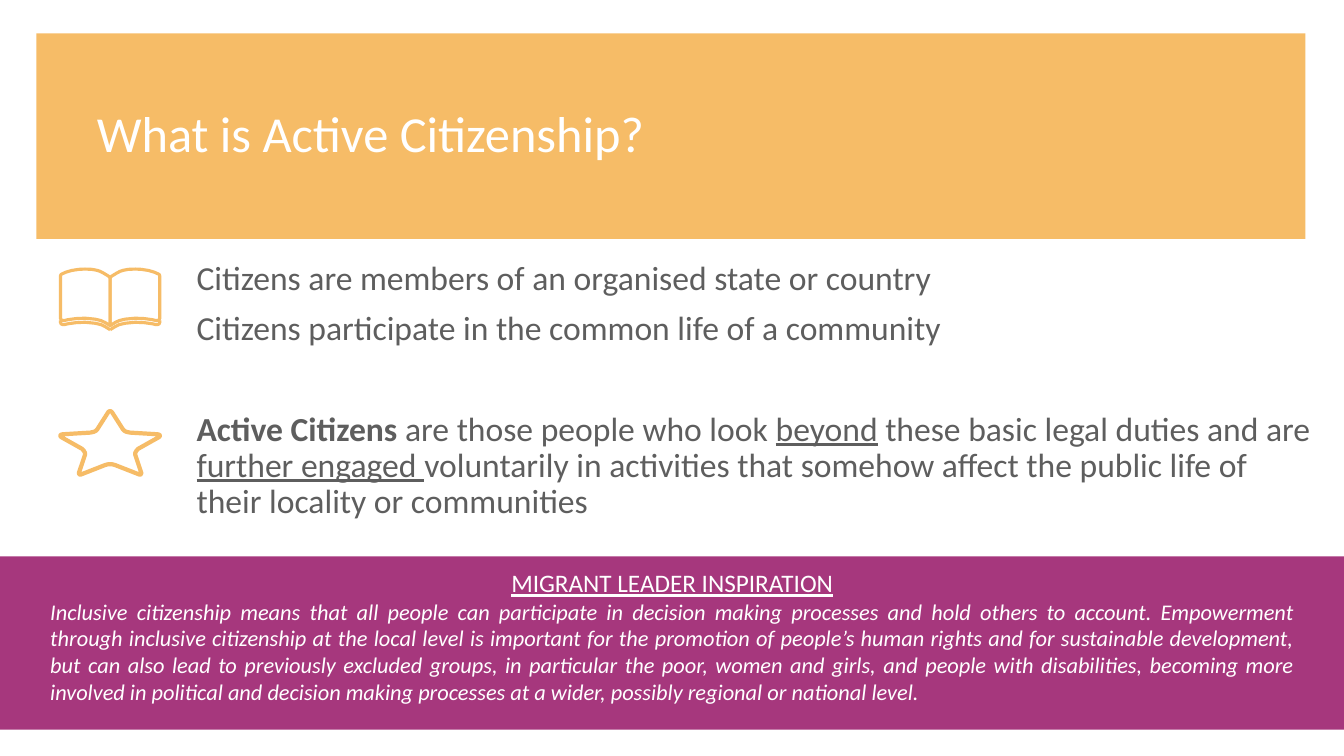
"""Build the slide that explains active citizenship."""
import pptx
import pptx.dml.color
import pptx.enum.text
import pptx.oxml.ns
import pptx.util
import lxml.etree

Pt = pptx.util.Pt
ALIGN = pptx.enum.text.PP_ALIGN
AMBER, PURPLE, GREY, WHITE = "F6BC67", "A6377D", "5E5E5E", "FFFFFF"


def color(hex_value):
    return pptx.dml.color.RGBColor.from_string(hex_value)


def draw_outline(points, width, closed):
    corners = [(Pt(x), Pt(y)) for x, y in points]
    builder = slide.shapes.build_freeform(*corners[0], scale=1.0)
    builder.add_line_segments(corners[1:], close=closed)
    outline = builder.convert_to_shape()
    outline.shadow.inherit = False
    outline.fill.background()
    outline.line.color.rgb = color(AMBER)
    outline.line.width = Pt(width)


deck = pptx.Presentation()
deck.slide_width, deck.slide_height = Pt(960), Pt(540)
slide = deck.slides.add_slide(deck.slide_layouts[1])
heading, definitions = slide.placeholders

bands = [(26, 23.8, 906.5, 146.9, AMBER), (0, 397.4, 960, 123.8, PURPLE)]
for depth, (left, top, width, height, fill) in enumerate(bands):
    band = slide.shapes.add_shape(1, Pt(left), Pt(top), Pt(width), Pt(height))
    band.shadow.inherit = False
    band.fill.solid()
    band.fill.fore_color.rgb = color(fill)
    band.line.fill.background()
    slide.shapes.element.insert(2 + depth, band.element)

inspiration = slide.shapes.add_textbox(0, 0, Pt(1), Pt(1))

tight = {"line_spacing": 0.9, "space_before": Pt(0), "alignment": ALIGN.LEFT}
spaced = {**tight, "space_before": Pt(10)}
after_gap = {**tight, "space_before": Pt(46)}
plain, underlined = {}, {"underline": True}
blocks = [
    (heading, (61.9, 74.2, 831.6, 54.7), 36, WHITE, [
        (tight, [("What is Active Citizenship?", plain)]),
    ]),
    (definitions, (133.2, 182.9, 812.2, 201.6), 24, GREY, [
        (tight, [("Citizens are members of an organised state or country", plain)]),
        (spaced, [("Citizens participate in the common life of a community", plain)]),
        (after_gap, [
            ("Active Citizens ", {"bold": True}),
            ("are those people who look ", plain),
            ("beyond", underlined),
            (" these basic legal duties and are ", plain),
            ("further engaged ", underlined),
            ("voluntarily in activities that somehow affect the public life of "
             "their locality or communities", plain),
        ]),
    ]),
    (inspiration, (28.8, 391, 902.9, 117.4), 16, WHITE, [
        ({"alignment": ALIGN.CENTER, "line_spacing": 1.5},
         [("MIGRANT LEADER INSPIRATION", {"underline": True, "size": Pt(18)})]),
        ({"alignment": ALIGN.JUSTIFY}, [(
            "Inclusive citizenship means that all people can participate in decision "
            "making processes and hold others to account. Empowerment through inclusive "
            "citizenship at the local level is important for the promotion of people’s "
            "human rights and for sustainable development, but can also lead to "
            "previously excluded groups, in particular the poor, women and girls, and "
            "people with disabilities, becoming more involved in political and decision "
            "making processes at a wider, possibly regional or national level.",
            {"italic": True})]),
    ]),
]
for block, place, size, ink, paragraphs in blocks:
    block.left, block.top, block.width, block.height = map(Pt, place)
    frame = block.text_frame
    frame_format = {"word_wrap": True,
                    "auto_size": pptx.enum.text.MSO_AUTO_SIZE.NONE,
                    "vertical_anchor": pptx.enum.text.MSO_ANCHOR.TOP}
    for name, value in frame_format.items():
        setattr(frame, name, value)
    for index, (layout, pieces) in enumerate(paragraphs):
        paragraph = frame.add_paragraph() if index else frame.paragraphs[0]
        for name, value in layout.items():
            setattr(paragraph, name, value)
        if block is definitions:
            properties = paragraph._p.get_or_add_pPr()
            properties.set("marL", "0")
            properties.set("indent", "0")
            lxml.etree.SubElement(properties, pptx.oxml.ns.qn("a:buNone"))
        for words, emphasis in pieces:
            run = paragraph.add_run()
            run.text = words
            run.font.color.rgb = color(ink)
            for name, value in {"name": "Calibri", "size": Pt(size), **emphasis}.items():
                setattr(run.font, name, value)

axis = 78.7
page_bottom = [(0, 232.6), (3.6, 230.4), (6.5, 229), (10.8, 228), (18, 227.3),
               (24.5, 227.6), (30.2, 228.4), (32.4, 228.9), (33.8, 229),
               (35, 228.5), (35.5, 227.3)]
page_top = [(35.5, 197.3), (35.2, 196.2), (34.4, 195.7), (31.5, 194.4),
            (27.4, 193.2), (22.3, 192.4), (18, 192.2), (13, 192.4), (9.4, 193.1),
            (7.2, 193.8), (5, 194.9), (3.6, 195.8), (1.4, 197.1), (0.5, 197.8),
            (0, 198.7)]
cover = [(x, y + 2.9) for x, y in page_bottom] + [(35.5, 228.9)]
for side in (-1, 1):
    for part, closed in ((cover, False), (page_bottom + page_top, True)):
        draw_outline([(axis + side * x, y) for x, y in part], 2.25, closed)

half_star = [(0, 293.6), (0.7, 293.8), (1.4, 294.5), (9.2, 306.7), (10.2, 307.7),
             (11.5, 308.4), (14.2, 309), (33.9, 310.2), (35.2, 310.5),
             (35.6, 311.1), (35.4, 311.8), (34.6, 312.4), (20, 320.6),
             (18.9, 321.8), (18, 323.3), (17.9, 324.7), (22.3, 337.8),
             (22.1, 338.7), (21.3, 339.1), (20.2, 338.7), (3.6, 332.2),
             (1.8, 331.7), (0, 331.6)]
star = half_star + [(-x, y) for x, y in half_star[-2:0:-1]]
draw_outline([(axis + x, y) for x, y in star], 3, True)

deck.save("out.pptx")
